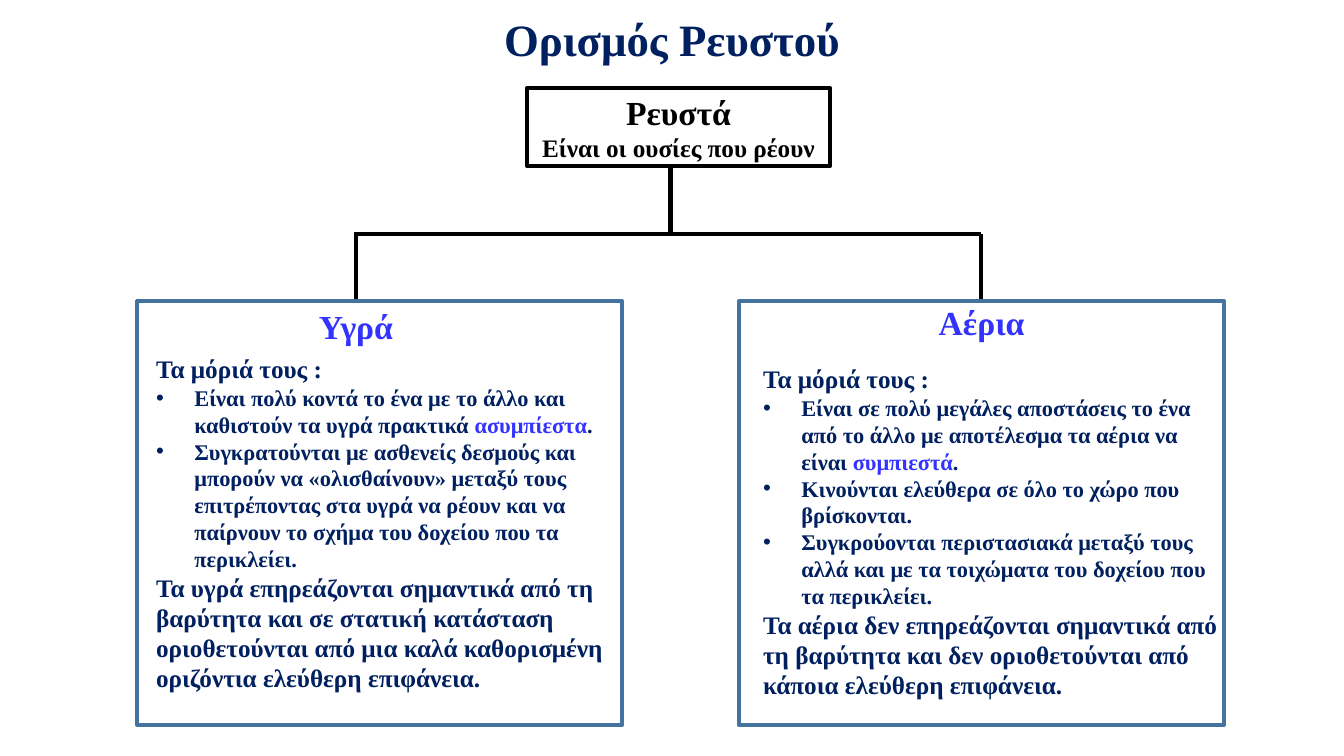
from dataclasses import dataclass

from lxml import etree
from pptx import Presentation
from pptx import util as u
from pptx.dml.color import RGBColor
from pptx.enum import shapes, text
from pptx.oxml.ns import qn

HUES = {"navy": "002060", "blue": "3333FF", "black": "000000", "steel": "43739E"}
FONT = "Times New Roman"
DROP = 2.99
BAR = 2.32


@dataclass
class Para:
    runs: list[tuple[str, str]]
    size: int
    mark: bool = False
    mid: bool = False


@dataclass
class Label:
    box: tuple[float, float, float, float]
    paras: list[Para]
    anchor: text.MSO_ANCHOR = text.MSO_ANCHOR.TOP


@dataclass
class Frame:
    box: tuple[float, float, float, float]
    hue: str


@dataclass
class Line:
    start: tuple[float, float]
    end: tuple[float, float]


def color(hue: str) -> RGBColor:
    return RGBColor.from_string(HUES[hue])


def head(words: str, size: int, hue: str) -> Para:
    return Para([(words, hue)], size, mid=True)


def body(words: str) -> Para:
    return Para([(words, "navy")], 18)


def point(words: str, key: str = "", rest: str = "") -> Para:
    runs = [(words, "navy"), (key, "blue"), (rest, "navy")]
    return Para([run for run in runs if run[0]], 16, mark=True)


def fill_text(frame, paras: list[Para], anchor: text.MSO_ANCHOR) -> None:
    frame.word_wrap = True
    frame.vertical_anchor = anchor
    for i, para in enumerate(paras):
        p = frame.add_paragraph() if i else frame.paragraphs[0]
        p.alignment = text.PP_ALIGN.CENTER if para.mid else text.PP_ALIGN.LEFT
        if para.mark:
            props = p._p.get_or_add_pPr()
            props.set("marL", str(u.Inches(0.38)))
            props.set("indent", str(u.Inches(-0.38)))
            etree.SubElement(props, qn("a:buFont")).set("typeface", "Arial")
            etree.SubElement(props, qn("a:buChar")).set("char", "•")
        p.font.name = FONT
        p.font.size = u.Pt(para.size)
        p.font.bold = True
        same = len({hue for _, hue in para.runs}) == 1
        if same:
            p.font.color.rgb = color(para.runs[0][1])
        for words, hue in para.runs:
            run = p.add_run()
            run.text = words
            if not same:
                run.font.color.rgb = color(hue)


def draw_label(slide, label: Label) -> None:
    box = slide.shapes.add_textbox(*map(u.Inches, label.box))
    fill_text(box.text_frame, label.paras, label.anchor)


def draw_frame(slide, frame: Frame):
    box = slide.shapes.add_shape(
        shapes.MSO_SHAPE.RECTANGLE, *map(u.Inches, frame.box)
    )
    box.shadow.inherit = False
    box.fill.background()
    box.line.color.rgb = color(frame.hue)
    box.line.width = u.Pt(3)
    return box


def draw_line(slide, line: Line) -> None:
    link = slide.shapes.add_connector(
        shapes.MSO_CONNECTOR.STRAIGHT, *map(u.Inches, line.start + line.end)
    )
    link.line.color.rgb = color("black")
    link.line.width = u.Pt(3)
    etree.SubElement(link._element.spPr, qn("a:effectLst"))


ROOT = Frame((5.23, 0.87, 3, 0.78), "black")
ROOT_TEXT = [
    head("Ρευστά", 24, "black"),
    head("Είναι οι ουσίες που ρέουν", 18, "black"),
]
FRAMES = [Frame((x, DROP, 4.81, 4.2), "steel") for x in (1.36, 7.33)]
LINES = [
    Line((6.65, 1.65), (6.65, BAR)),
    Line((3.51, BAR), (9.73, BAR)),
    *[Line((x, BAR), (x, DROP)) for x in (3.53, 9.73)],
]
LABELS = [
    Label(
        (0, 0.05, 13.33, 0.66),
        [head("Ορισμός Ρευστού", 32, "navy")],
        text.MSO_ANCHOR.MIDDLE,
    ),
    Label((3.01, 2.99, 1.04, 0.5), [head("Υγρά", 24, "blue")]),
    Label((9.01, 2.95, 1.45, 0.5), [head("Αέρια", 24, "blue")]),
    Label(
        (1.45, 3.46, 4.73, 3.48),
        [
            body("Τα μόριά τους :"),
            point(
                "Είναι πολύ κοντά το ένα με το άλλο και "
                "καθιστούν τα υγρά πρακτικά ",
                "ασυμπίεστα",
                ".",
            ),
            point(
                "Συγκρατούνται με ασθενείς δεσμούς και μπορούν να "
                "«ολισθαίνουν» μεταξύ τους επιτρέποντας στα υγρά να ρέουν "
                "και να παίρνουν το σχήμα του δοχείου που τα περικλείει."
            ),
            body(
                "Τα υγρά επηρεάζονται σημαντικά από τη βαρύτητα και σε "
                "στατική κατάσταση οριοθετούνται από μια καλά καθορισμένη "
                "οριζόντια ελεύθερη επιφάνεια."
            ),
        ],
    ),
    Label(
        (7.47, 3.56, 4.73, 3.38),
        [
            body("Τα μόριά τους :"),
            point(
                "Είναι σε πολύ μεγάλες αποστάσεις το ένα από το άλλο "
                "με αποτέλεσμα τα αέρια να είναι ",
                "συμπιεστά",
                ".",
            ),
            point("Κινούνται ελεύθερα σε όλο το χώρο που βρίσκονται."),
            point(
                "Συγκρούονται περιστασιακά μεταξύ τους αλλά και με τα "
                "τοιχώματα του δοχείου που τα περικλείει."
            ),
            body(
                "Τα αέρια δεν επηρεάζονται σημαντικά από τη βαρύτητα και "
                "δεν οριοθετούνται από κάποια ελεύθερη επιφάνεια."
            ),
        ],
    ),
]


def main() -> None:
    deck = Presentation()
    deck.slide_width = u.Inches(13.33)
    deck.slide_height = u.Inches(7.5)
    slide = deck.slides.add_slide(deck.slide_layouts[6])
    root = draw_frame(slide, ROOT)
    fill_text(root.text_frame, ROOT_TEXT, text.MSO_ANCHOR.MIDDLE)
    for line in LINES:
        draw_line(slide, line)
    for frame in FRAMES:
        draw_frame(slide, frame)
    for label in LABELS:
        draw_label(slide, label)
    deck.save("out.pptx")


if __name__ == "__main__":
    main()
